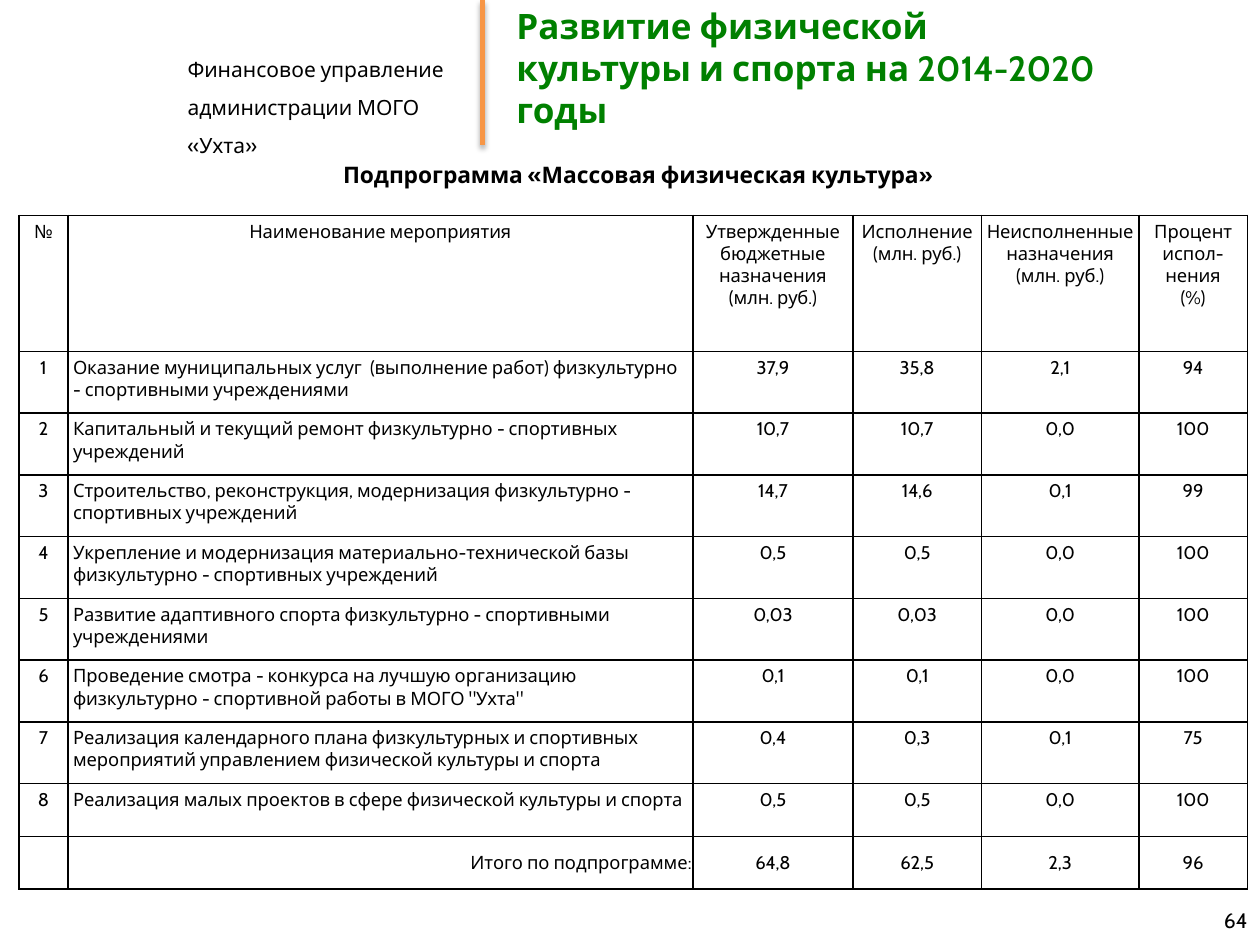
import pptx
import pptx.util
import pptx.dml.color
import pptx.enum.shapes
import pptx.enum.text
from lxml import etree

Inches, Pt = pptx.util.Inches, pptx.util.Pt
ALIGN = pptx.enum.text.PP_ALIGN
ANCHOR = pptx.enum.text.MSO_ANCHOR
RGBColor = pptx.dml.color.RGBColor

BLACK = RGBColor(0x00, 0x00, 0x00)
GREEN = RGBColor(0x00, 0x80, 0x00)
ORANGE = RGBColor(0xF7, 0x96, 0x46)
FONT = "Cabin"
DRAWING_NS = "http://schemas.openxmlformats.org/drawingml/2006/main"

COLUMN_WIDTHS = [0.39, 4.96, 1.27, 1.02, 1.25, 0.86]
HEADER_HEIGHT, EVENT_HEIGHT, LAST_HEIGHT = 1.08, 0.49, 0.42
HEADINGS = [
    "№",
    "Наименование мероприятия",
    "Утвержденные бюджетные назначения\n(млн. руб.)",
    "Исполнение\n(млн. руб.)",
    "Неисполненные назначения\n(млн. руб.)",
    "Процент испол-нения\n(%)",
]
EVENTS = [
    ("Оказание муниципальных услуг  (выполнение работ) физкультурно - спортивными учреждениями",
     "37,9", "35,8", "2,1", "94"),
    ("Капитальный и текущий ремонт физкультурно - спортивных учреждений",
     "10,7", "10,7", "0,0", "100"),
    ("Строительство, реконструкция, модернизация физкультурно - спортивных учреждений",
     "14,7", "14,6", "0,1", "99"),
    ("Укрепление и модернизация материально-технической базы физкультурно - спортивных учреждений",
     "0,5", "0,5", "0,0", "100"),
    ("Развитие адаптивного спорта физкультурно - спортивными учреждениями",
     "0,03", "0,03", "0,0", "100"),
    ("Проведение смотра - конкурса на лучшую организацию физкультурно - спортивной работы "
     "в МОГО \"Ухта\"", "0,1", "0,1", "0,0", "100"),
    ("Реализация календарного плана физкультурных и спортивных мероприятий управлением "
     "физической культуры и спорта", "0,4", "0,3", "0,1", "75"),
    ("Реализация малых проектов в сфере физической культуры и спорта",
     "0,5", "0,5", "0,0", "100"),
]
TOTAL = ("Итого по подпрограмме:", "64,8", "62,5", "2,3", "96")


def write(frame, text, size, color=BLACK, bold=False, align=ALIGN.LEFT, spacing=None):
    frame.text = text
    for paragraph in frame.paragraphs:
        paragraph.alignment = align
        paragraph.line_spacing = spacing
        paragraph.font.name = FONT
        paragraph.font.size = Pt(size)
        paragraph.font.bold = bold
        paragraph.font.color.rgb = color


def add_text(slide, box, text, size, anchor=ANCHOR.TOP, **style):
    frame = slide.shapes.add_textbox(*map(Inches, box)).text_frame
    frame.word_wrap = True
    frame.vertical_anchor = anchor
    write(frame, text, size, **style)


def add_divider(slide, x, height):
    """Vertical orange rule with a soft shadow below it."""
    divider = slide.shapes.add_connector(
        pptx.enum.shapes.MSO_CONNECTOR.STRAIGHT, Inches(x), 0, Inches(x), Inches(height))
    divider.line.color.rgb = ORANGE
    divider.line.width = Pt(3)
    divider._element.spPr.append(etree.fromstring(
        f'<a:effectLst xmlns:a="{DRAWING_NS}">'
        f'<a:outerShdw blurRad="{Pt(3.1)}" dist="{Pt(1.8)}" dir="5400000" rotWithShape="0">'
        '<a:srgbClr val="000000"><a:alpha val="35000"/></a:srgbClr>'
        '</a:outerShdw></a:effectLst>'))


def add_header(slide, left, top, height):
    """Department on the left of the divider, programme title on its right."""
    divider_x = left + 2.44
    add_text(slide, (left, top + 0.3, 2.5, 0.66),
             "Финансовое управление\nадминистрации МОГО «Ухта»", 12, spacing=1.5)
    add_divider(slide, divider_x, height)
    add_text(slide, (divider_x + 0.17, top + 0.03, 4.88, 1.01),
             "Развитие физической культуры и спорта на 2014-2020 годы",
             20, ANCHOR.MIDDLE, color=GREEN, bold=True)


def border_cell(cell):
    properties = cell._tc.get_or_add_tcPr()
    for position, side in enumerate(("lnL", "lnR", "lnT", "lnB")):
        properties.insert(position, etree.fromstring(
            f'<a:{side} xmlns:a="{DRAWING_NS}" w="{Pt(1)}">'
            f'<a:solidFill><a:srgbClr val="{BLACK}"/></a:solidFill></a:{side}>'))


def fill_cell(cell, text, align, is_total):
    inset = Inches(0.01 if is_total else 0.04)
    cell.margin_left = cell.margin_right = cell.margin_top = inset
    cell.margin_bottom = 0 if is_total else inset
    cell.vertical_anchor = ANCHOR.MIDDLE if is_total else ANCHOR.TOP
    cell.fill.background()
    write(cell.text_frame, text, 10.5, align=align)
    border_cell(cell)


def add_budget_table(slide, left, top):
    rows = [HEADINGS]
    rows += [(str(number), *event) for number, event in enumerate(EVENTS, 1)]
    rows.append(("", *TOTAL))
    heights = [HEADER_HEIGHT] + [EVENT_HEIGHT] * (len(EVENTS) - 1) + [LAST_HEIGHT] * 2
    last = len(rows) - 1

    table = slide.shapes.add_table(
        len(rows), len(COLUMN_WIDTHS), Inches(left), Inches(top),
        Inches(sum(COLUMN_WIDTHS)), Inches(sum(heights))).table
    table.first_row = table.horz_banding = False
    for column, width in zip(table.columns, COLUMN_WIDTHS):
        column.width = Inches(width)
    for r, (texts, height) in enumerate(zip(rows, heights)):
        table.rows[r].height = Inches(height)
        name_align = {0: ALIGN.CENTER, last: ALIGN.RIGHT}.get(r, ALIGN.LEFT)
        for c, text in enumerate(texts):
            align = name_align if c == 1 else ALIGN.CENTER
            fill_cell(table.cell(r, c), text, align, is_total=r == last)


def main():
    deck = pptx.Presentation()
    deck.slide_width, deck.slide_height = Inches(10), Inches(7.5)
    slide = deck.slides.add_slide(deck.slide_layouts[6])
    add_header(slide, left=1.39, top=0, height=1.15)
    add_budget_table(slide, left=0.15, top=1.71)
    add_text(slide, (0.17, 1.23, 9.78, 0.57), "Подпрограмма «Массовая физическая культура»",
             13, bold=True, align=ALIGN.CENTER)
    add_text(slide, (7.67, 7.1, 2.33, 0.4), "64", 12, ANCHOR.MIDDLE, align=ALIGN.RIGHT)
    deck.save("out.pptx")


if __name__ == "__main__":
    main()
